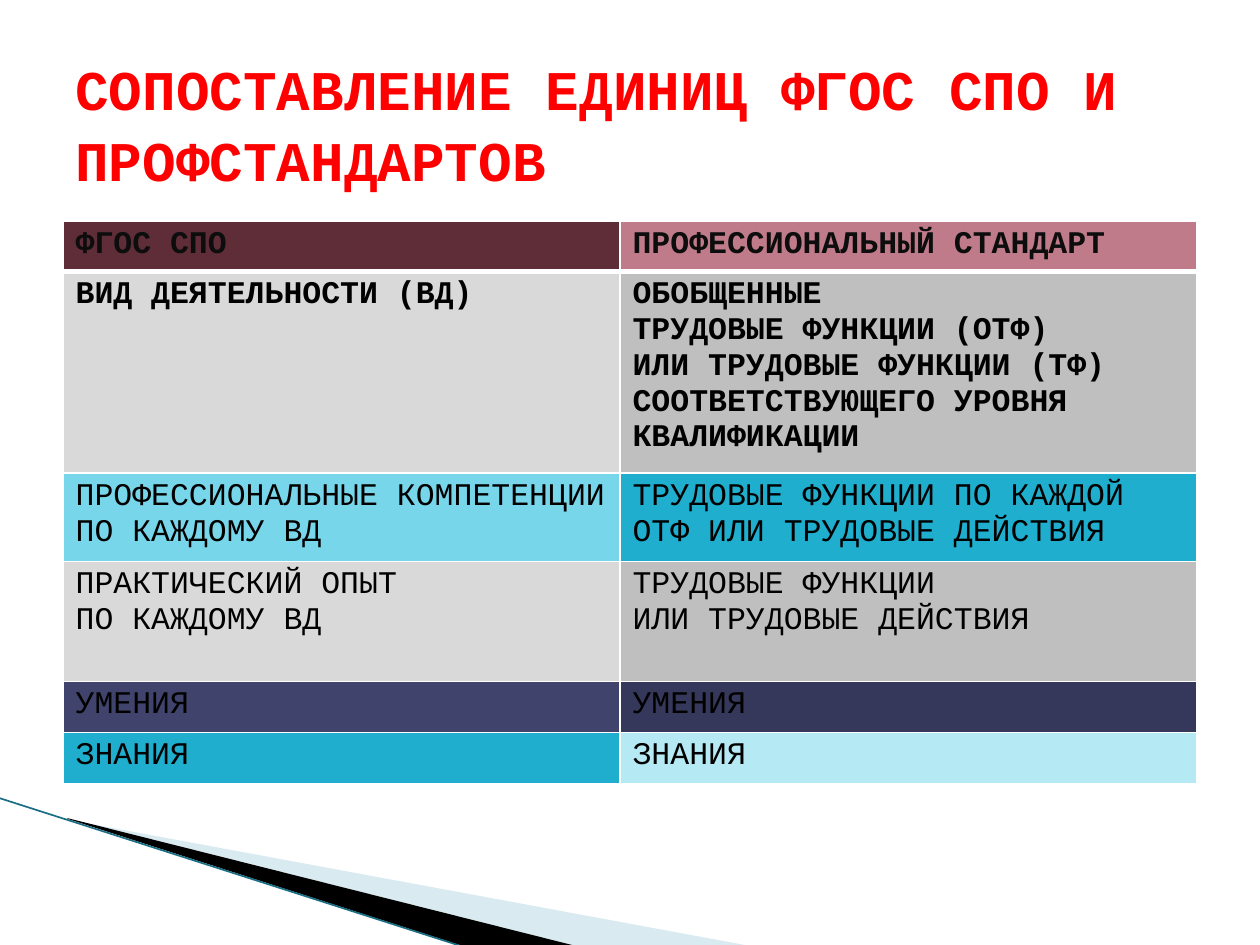
from lxml import etree
from pptx import Presentation
from pptx.dml.color import RGBColor
from pptx.enum.shapes import MSO_CONNECTOR
from pptx.enum.text import MSO_ANCHOR
from pptx.oxml.ns import qn
from pptx.util import Emu, Pt

SCALE = 914400 / 126
FONT = "Courier New"
MIDDLE = MSO_ANCHOR.MIDDLE
STRAIGHT = MSO_CONNECTOR.STRAIGHT
BLACK = "000000"
WHITE = "FFFFFF"
HEADER_TEXT = "0D0D0D"

COLUMN_WIDTHS = [557, 577]
ROW_HEIGHTS = [50, 192, 84, 120, 51, 51]
BOLD_ROWS = 2
ROWS = [
    [("ФГОС СПО", "5E2D37"), ("ПРОФЕССИОНАЛЬНЫЙ СТАНДАРТ", "C07B8A")],
    [("ВИД ДЕЯТЕЛЬНОСТИ (ВД)", "D9D9D9"),
     ("ОБОБЩЕННЫЕ\nТРУДОВЫЕ ФУНКЦИИ (ОТФ)\n"
      "ИЛИ ТРУДОВЫЕ ФУНКЦИИ (ТФ) СООТВЕТСТВУЮЩЕГО УРОВНЯ КВАЛИФИКАЦИИ", "BFBFBF")],
    [("ПРОФЕССИОНАЛЬНЫЕ КОМПЕТЕНЦИИ ПО КАЖДОМУ ВД", "78D6EA"),
     ("ТРУДОВЫЕ ФУНКЦИИ ПО КАЖДОЙ ОТФ ИЛИ ТРУДОВЫЕ ДЕЙСТВИЯ", "1FAECD")],
    [("ПРАКТИЧЕСКИЙ ОПЫТ\nПО КАЖДОМУ ВД", "D9D9D9"),
     ("ТРУДОВЫЕ ФУНКЦИИ\nИЛИ ТРУДОВЫЕ ДЕЙСТВИЯ", "BFBFBF")],
    [("УМЕНИЯ", "40446C"), ("УМЕНИЯ", "35385A")],
    [("ЗНАНИЯ", "1FAECD"), ("ЗНАНИЯ", "B5E9F4")],
]


def px(length):
    """Turn a length in px into EMU."""
    return Emu(round(length * SCALE))


def rgb(color):
    """Turn a hex string into a colour."""
    return RGBColor.from_string(color)


def write_text(frame, text, size=18, color=BLACK, bold=False, spacing=None):
    """Fill a text frame with one paragraph for each line of text."""
    frame.word_wrap = True
    frame.text = text
    for paragraph in frame.paragraphs:
        paragraph.line_spacing = spacing
        for run in paragraph.runs:
            run.font.name = FONT
            run.font.size = Pt(size)
            run.font.bold = bold
            run.font.color.rgb = rgb(color)


def add_wedge(slide, points, color, opacity=100):
    """Draw a closed outline with a plain fill."""
    builder = slide.shapes.build_freeform(*points[0], scale=SCALE)
    builder.add_line_segments(points[1:], close=True)
    shape = builder.convert_to_shape()
    shape.shadow.inherit = False
    shape.line.fill.background()
    shape.fill.solid()
    shape.fill.fore_color.rgb = rgb(color)
    if opacity < 100:
        fill_color = shape.fill._xPr.find(qn("a:solidFill"))[0]
        etree.SubElement(fill_color, qn("a:alpha"), val=str(opacity * 1000))


def add_rule(slide, start, end, color, width):
    """Draw a straight line without a shadow."""
    line = slide.shapes.add_connector(STRAIGHT, *map(px, start + end))
    line.line.color.rgb = rgb(color)
    line.line.width = Pt(width)
    etree.SubElement(line._element.spPr, qn("a:effectLst"))


def add_title(slide, text):
    """Add the heading of the slide."""
    box = slide.shapes.add_textbox(px(63), px(38), px(1134), px(158))
    frame = box.text_frame
    frame.vertical_anchor = MIDDLE
    frame.margin_top = px(16)
    write_text(frame, text, size=32, color="FF0000", bold=True, spacing=1.05)


def set_borders(cell, widths):
    """Give the sides of a cell white borders of the given widths."""
    properties = cell._tc.get_or_add_tcPr()
    for side, width in widths.items():
        border = etree.SubElement(properties, qn(f"a:ln{side}"), w=str(Pt(width)))
        fill = etree.SubElement(border, qn("a:solidFill"))
        etree.SubElement(fill, qn("a:srgbClr"), val=WHITE)


def add_comparison(slide):
    """Add the table that sets the two standards side by side."""
    frame = slide.shapes.add_table(
        len(ROWS), len(COLUMN_WIDTHS), px(63), px(221),
        px(sum(COLUMN_WIDTHS)), px(sum(ROW_HEIGHTS)))
    table = frame.table
    for column, width in zip(table.columns, COLUMN_WIDTHS):
        column.width = px(width)
    for row_index, (row, height) in enumerate(zip(ROWS, ROW_HEIGHTS)):
        table.rows[row_index].height = px(height)
        top = 3 if row_index == 1 else 1
        bottom = 3 if row_index == 0 else 1
        for column_index, (text, fill) in enumerate(row):
            cell = table.cell(row_index, column_index)
            set_borders(cell, {"L": 1, "R": 1, "T": top, "B": bottom})
            cell.fill.solid()
            cell.fill.fore_color.rgb = rgb(fill)
            write_text(cell.text_frame, text, bold=row_index < BOLD_ROWS,
                       color=BLACK if row_index else HEADER_TEXT)


def main():
    """Build the slide and save it."""
    presentation = Presentation()
    presentation.slide_width = px(1260)
    presentation.slide_height = px(945)
    slide = presentation.slides.add_slide(presentation.slide_layouts[6])
    add_wedge(slide, [(69, 820), (750, 946), (575, 946), (69, 819)], "A0CBDC", opacity=40)
    add_wedge(slide, [(67, 818), (576, 946), (469, 948), (68, 819)], BLACK)
    add_rule(slide, (-1, 798), (467, 948), "1A6E84", 0.95)
    add_title(slide, "СОПОСТАВЛЕНИЕ ЕДИНИЦ ФГОС СПО И ПРОФСТАНДАРТОВ")
    add_comparison(slide)
    presentation.save("out.pptx")


if __name__ == "__main__":
    main()
